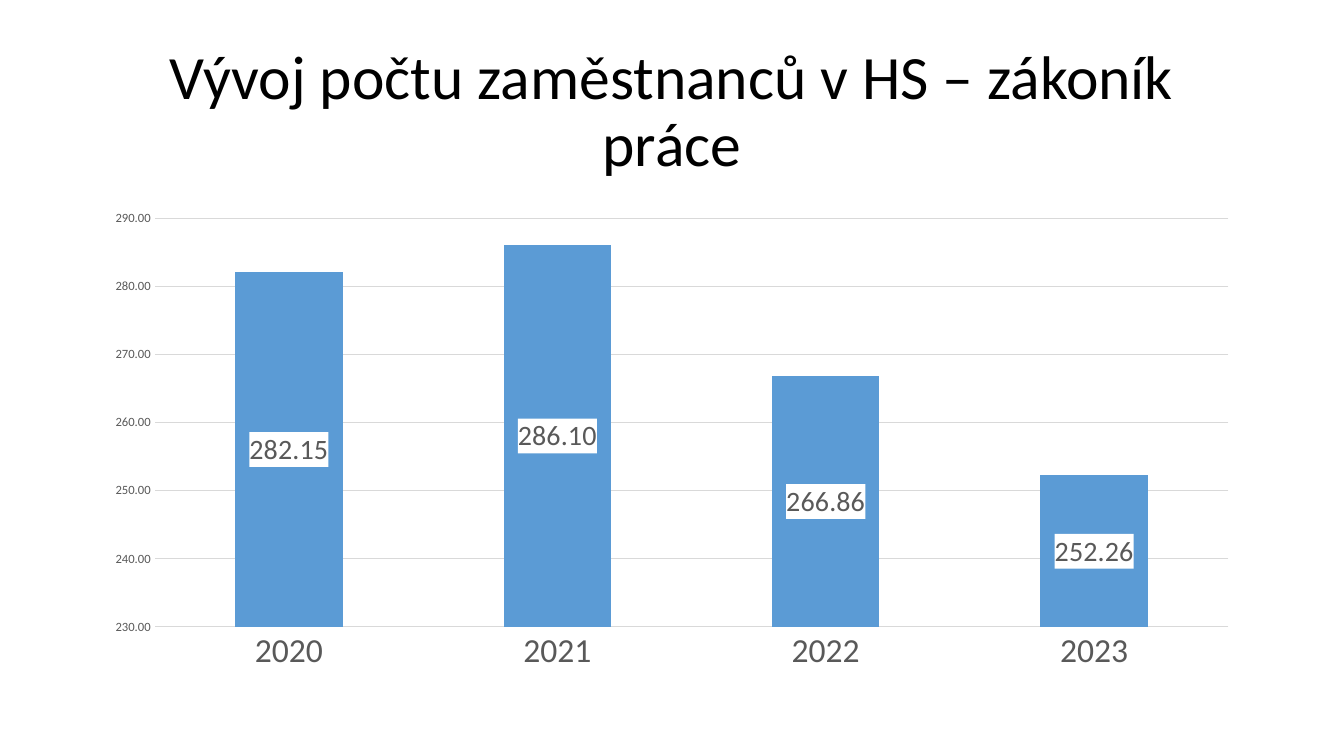
import pptx
import pptx.chart.data
import pptx.dml.color
import pptx.enum.chart
import pptx.enum.text
import pptx.oxml
import pptx.oxml.ns
import pptx.util

EMU_PER_PX = 9525
FONT_NAME = "Calibri"
BLACK, GREY, GRID_GREY, BLUE, WHITE = "000000", "595959", "D9D9D9", "5B9BD5", "FFFFFF"

TITLE = "Vývoj počtu zaměstnanců v HS – zákoník práce"
EMPLOYEES = {"2020": 282.15, "2021": 286.10, "2022": 266.86, "2023": 252.26}
NUMBER_FORMAT = "#,##0.00"


def px(*lengths):
    return [pptx.util.Emu(length * EMU_PER_PX) for length in lengths]


def color(hex_string):
    return pptx.dml.color.RGBColor.from_string(hex_string)


def set_attributes(target, values):
    for name, value in values.items():
        setattr(target, name, value)


def set_font(font, size, hex_string):
    set_attributes(font, {"name": FONT_NAME, "size": pptx.util.Pt(size)})
    font.color.rgb = color(hex_string)


def add_title(slide, text, box):
    frame = slide.shapes.add_textbox(*px(*box)).text_frame
    set_attributes(frame, {
        "word_wrap": True,
        "vertical_anchor": pptx.enum.text.MSO_ANCHOR.MIDDLE,
    })
    paragraph = frame.paragraphs[0]
    set_attributes(paragraph, {
        "text": text,
        "alignment": pptx.enum.text.PP_ALIGN.CENTER,
        "line_spacing": 0.9,
    })
    set_font(paragraph.runs[0].font, 44, BLACK)


def format_axis(axis, size, values):
    no_tick = pptx.enum.chart.XL_TICK_MARK.NONE
    set_attributes(axis, {"major_tick_mark": no_tick, "minor_tick_mark": no_tick, **values})
    axis.format.line.fill.background()
    set_font(axis.tick_labels.font, size, GREY)


def format_labels(labels):
    set_attributes(labels, {
        "show_value": True,
        "number_format": NUMBER_FORMAT,
        "number_format_is_linked": False,
        "position": pptx.enum.chart.XL_LABEL_POSITION.CENTER,
    })
    set_font(labels.font, 20, GREY)
    # White box behind each value
    label_fill = pptx.oxml.parse_xml(
        f'<c:spPr {pptx.oxml.ns.nsdecls("c", "a")}><a:solidFill>'
        f'<a:srgbClr val="{WHITE}"/></a:solidFill></c:spPr>'
    )
    labels._element.find(pptx.oxml.ns.qn("c:txPr")).addprevious(label_fill)


def add_column_chart(slide, values_by_year, box):
    data = pptx.chart.data.CategoryChartData(number_format=NUMBER_FORMAT)
    data.categories = list(values_by_year)
    data.add_series("Series 1", list(values_by_year.values()))
    chart_type = pptx.enum.chart.XL_CHART_TYPE.COLUMN_STACKED
    chart = slide.shapes.add_chart(chart_type, *px(*box), data).chart
    set_attributes(chart, {"has_legend": False, "has_title": False})
    set_font(chart.font, 10, BLACK)

    # Axes and grid
    format_axis(chart.category_axis, 24, {"has_major_gridlines": False})
    value_axis = chart.value_axis
    format_axis(value_axis, 9, {
        "minimum_scale": 230,
        "maximum_scale": 290,
        "major_unit": 10,
        "has_major_gridlines": True,
    })
    set_attributes(value_axis.tick_labels, {
        "number_format": NUMBER_FORMAT,
        "number_format_is_linked": False,
    })
    grid_line = value_axis.major_gridlines.format.line
    grid_line.width = pptx.util.Pt(0.75)
    grid_line.color.rgb = color(GRID_GREY)

    # Columns
    plot = chart.plots[0]
    set_attributes(plot, {"gap_width": 150, "overlap": 100, "vary_by_categories": False})
    series = plot.series[0]
    series.format.fill.solid()
    series.format.fill.fore_color.rgb = color(BLUE)
    format_labels(series.data_labels)


def main():
    presentation = pptx.Presentation()
    width, height = px(1280, 720)
    set_attributes(presentation, {"slide_width": width, "slide_height": height})
    slide = presentation.slides.add_slide(presentation.slide_layouts[6])
    add_title(slide, TITLE, (88, 38, 1104, 139))
    add_column_chart(slide, EMPLOYEES, (88, 192, 1104, 457))
    presentation.save("out.pptx")


if __name__ == "__main__":
    main()
